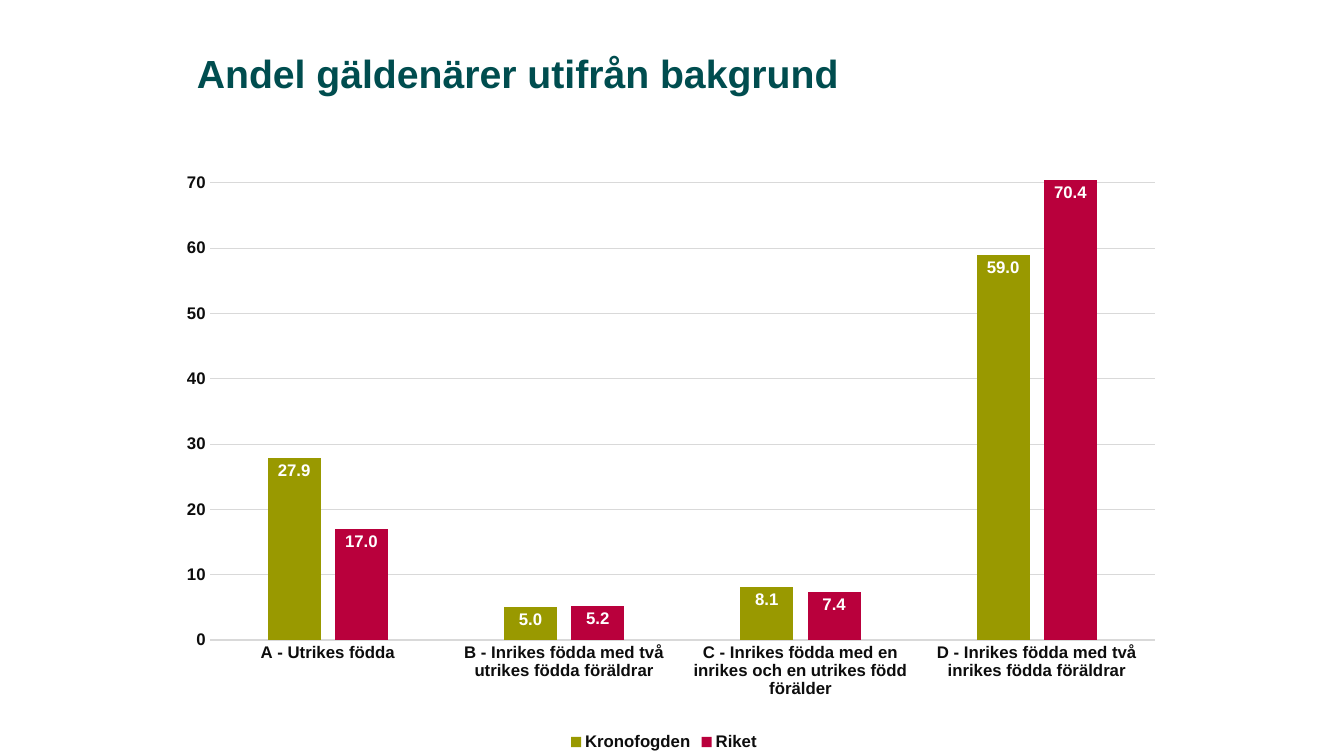
from typing import NamedTuple

from lxml import etree
from pptx import Presentation
from pptx import util as u
from pptx.chart.data import CategoryChartData
from pptx.dml.color import RGBColor
from pptx.enum import chart as c
from pptx.enum import text as t
from pptx.oxml.ns import qn

EMU_PER_PX = 914400 / 100.8

TEAL = RGBColor(0x00, 0x4D, 0x4F)
OLIVE = RGBColor(0x99, 0x99, 0x00)
CRIMSON = RGBColor(0xB9, 0x00, 0x3C)
INK = RGBColor(0x0D, 0x0D, 0x0D)
GRID = RGBColor(0xD9, 0xD9, 0xD9)
WHITE = RGBColor(0xFF, 0xFF, 0xFF)


class Box(NamedTuple):
    left: int
    top: int
    width: int
    height: int


class Group(NamedTuple):
    name: str
    shares: tuple[float, ...]
    color: RGBColor


TITLE = "Andel gäldenärer utifrån bakgrund"
TITLE_BOX = Box(187, 44, 695, 103)
CHART_BOX = Box(168, 134, 992, 621)
BACKGROUNDS = (
    "A - Utrikes födda",
    "B - Inrikes födda med två utrikes födda föräldrar",
    "C - Inrikes födda med en inrikes och en utrikes född förälder",
    "D - Inrikes födda med två inrikes födda föräldrar",
)
GROUPS = (
    Group("Kronofogden", (27.9, 5, 8.1, 59), OLIVE),
    Group("Riket", (17, 5.2, 7.4, 70.4), CRIMSON),
)
PLOT_LAYOUT = {
    "layoutTarget": "inner", "xMode": "edge", "yMode": "edge",
    "x": 0.042, "y": 0.026, "w": 0.953, "h": 0.789,
}


def px(length: int) -> u.Emu:
    return u.Emu(round(length * EMU_PER_PX))


def place(box: Box) -> tuple[u.Emu, ...]:
    return tuple(px(length) for length in box)


def set_all(target: object, values: dict[str, object]) -> None:
    for name, value in values.items():
        setattr(target, name, value)


def style_font(font: object, size: int, color: RGBColor) -> None:
    set_all(font, {"name": "Arial", "size": u.Pt(size), "bold": True})
    font.color.rgb = color


def style_line(line: object) -> None:
    line.color.rgb = GRID
    line.width = u.Pt(0.75)


def fix_plot_area(chart: object) -> None:
    """Give the inner plot area a fixed place within the chart."""
    area = chart._chartSpace.chart.plotArea
    for old in area.findall(qn("c:layout")):
        area.remove(old)
    layout = etree.Element(qn("c:layout"))
    manual = etree.SubElement(layout, qn("c:manualLayout"))
    for name, value in PLOT_LAYOUT.items():
        etree.SubElement(manual, qn(f"c:{name}")).set("val", str(value))
    area.insert(0, layout)


def add_title(page: object) -> None:
    frame = page.shapes.add_textbox(*place(TITLE_BOX)).text_frame
    set_all(frame, {"word_wrap": True, "vertical_anchor": t.MSO_ANCHOR.TOP})
    span = frame.paragraphs[0].add_run()
    span.text = TITLE
    style_font(span.font, 28, TEAL)


def style_axes(chart: object) -> None:
    for axis in (chart.category_axis, chart.value_axis):
        set_all(axis, {
            "major_tick_mark": c.XL_TICK_MARK.NONE,
            "minor_tick_mark": c.XL_TICK_MARK.NONE,
        })
        style_font(axis.tick_labels.font, 12, INK)
    style_line(chart.category_axis.format.line)

    values = chart.value_axis
    set_all(values, {
        "minimum_scale": 0, "maximum_scale": 75, "major_unit": 10,
        "has_major_gridlines": True,
    })
    set_all(values.tick_labels, {
        "number_format": "###0", "number_format_is_linked": False,
    })
    values.format.line.fill.background()
    style_line(values.major_gridlines.format.line)


def style_columns(chart: object) -> None:
    plot = chart.plots[0]
    set_all(plot, {"gap_width": 219, "overlap": -27, "vary_by_categories": False})
    for series, group in zip(plot.series, GROUPS):
        series.format.fill.solid()
        series.format.fill.fore_color.rgb = group.color
        labels = series.data_labels
        set_all(labels, {
            "show_value": True,
            "position": c.XL_LABEL_POSITION.INSIDE_END,
            "number_format": "0.0",
            "number_format_is_linked": False,
        })
        style_font(labels.font, 12, WHITE)


def add_share_chart(page: object) -> None:
    data = CategoryChartData(number_format="0.0")
    data.categories = BACKGROUNDS
    for group in GROUPS:
        data.add_series(group.name, group.shares)
    chart = page.shapes.add_chart(
        c.XL_CHART_TYPE.COLUMN_CLUSTERED, *place(CHART_BOX), data
    ).chart
    set_all(chart, {"has_title": False, "has_legend": True})
    set_all(chart.font, {"name": "Arial", "size": u.Pt(10)})
    set_all(chart.legend, {
        "position": c.XL_LEGEND_POSITION.BOTTOM, "include_in_layout": False,
    })
    style_font(chart.legend.font, 12, INK)
    style_axes(chart)
    style_columns(chart)
    fix_plot_area(chart)


def main() -> None:
    deck = Presentation()
    set_all(deck, {"slide_width": px(1344), "slide_height": px(756)})
    page = deck.slides.add_slide(deck.slide_layouts[6])
    add_share_chart(page)
    add_title(page)
    deck.save("out.pptx")


if __name__ == "__main__":
    main()
